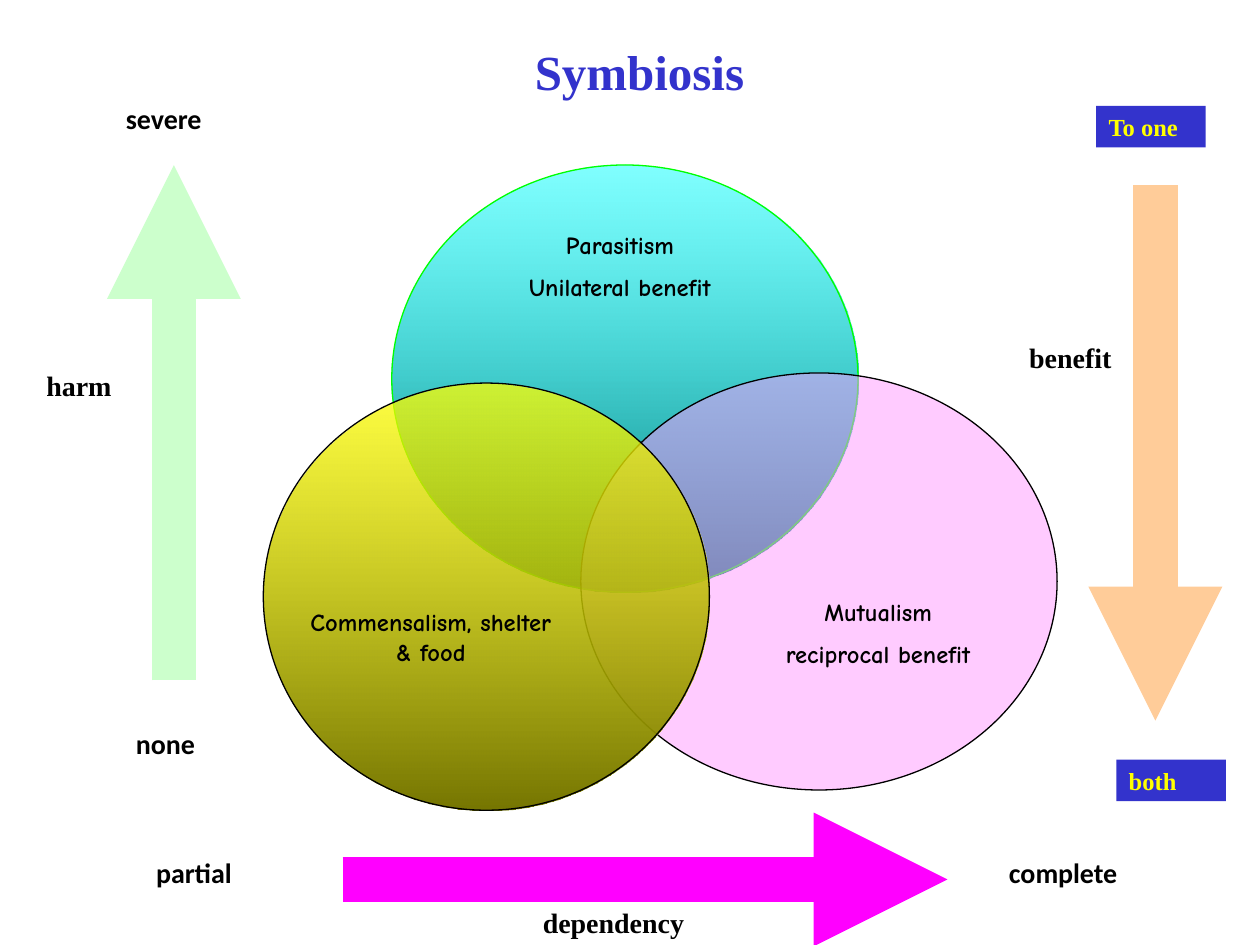
import pptx
import pptx.util
import pptx.dml.color
import pptx.enum.dml
import pptx.enum.shapes
import pptx.enum.text
import pptx.oxml.ns
from lxml import etree

Inches = pptx.util.Inches
Pt = pptx.util.Pt
RGB = pptx.dml.color.RGBColor
qn = pptx.oxml.ns.qn
SHAPE = pptx.enum.shapes.MSO_SHAPE
ALIGN = pptx.enum.text.PP_ALIGN

BLACK = RGB(0, 0, 0)
BLUE = RGB(0x33, 0x33, 0xCC)
YELLOW = RGB(0xFF, 0xFF, 0)
OLIVE = RGB(0x76, 0x76, 0)
CYAN = RGB(0, 0xFF, 0xFF)
TEAL = RGB(0, 0x76, 0x76)
GREEN = RGB(0, 0xFF, 0)
PINK = RGB(0xFF, 0x99, 0xFF)
PEACH = RGB(0xFF, 0xCC, 0x99)
MINT = RGB(0xCC, 0xFF, 0xCC)
MAGENTA = RGB(0xFF, 0, 0xFF)

SERIF = "Times New Roman"
SANS = "Calibri"
COMIC = "Comic Neue"


def add_circle(s, box, colors, opacity, line):
    sp = s.shapes.add_shape(SHAPE.OVAL, *map(Inches, box))
    sp.shadow.inherit = False
    if len(colors) == 1:
        sp.fill.solid()
        sp.fill.fore_color.rgb = colors[0]
    else:
        sp.fill.gradient()
        sp.fill.gradient_angle = 270
        for stop, color, position in zip(sp.fill.gradient_stops, colors, (0, 1)):
            stop.color.rgb = color
            stop.position = position
    first = next(sp._element.spPr.iter(qn("a:srgbClr")))
    etree.SubElement(first, qn("a:alpha"), val=str(opacity * 1000))
    sp.line.color.rgb = line
    sp.line.width = Pt(0.75)


def add_arrow(s, points, color):
    cx = s.shapes.add_connector(
        pptx.enum.shapes.MSO_CONNECTOR.STRAIGHT, *map(Inches, points))
    cx.line.color.rgb = color
    cx.line.width = Pt(25.5)
    etree.SubElement(cx.line._get_or_add_ln(), qn("a:tailEnd"), type="triangle")
    etree.SubElement(cx._element.spPr, qn("a:effectLst"))


def write_text(sp, lines, font, size, color, align=ALIGN.LEFT, wrap=True):
    tf = sp.text_frame
    tf.word_wrap = wrap
    tf.auto_size = pptx.enum.text.MSO_AUTO_SIZE.SHAPE_TO_FIT_TEXT
    tf.vertical_anchor = pptx.enum.text.MSO_ANCHOR.TOP
    tf.text = "\n".join(lines)
    for i, p in enumerate(tf.paragraphs):
        p.alignment = align
        p.font.name = font
        p.font.size = Pt(size)
        p.font.bold = True
        p.font.color.rgb = color
        if i:
            p.space_before = Pt(size / 2)


def add_label(s, box, lines, font, size, color=BLACK, **layout):
    sp = s.shapes.add_textbox(*map(Inches, box))
    write_text(sp, lines, font, size, color, **layout)


def add_tag(s, left, top, text):
    sp = s.shapes.add_shape(
        SHAPE.RECTANGLE, Inches(left), Inches(top), Inches(0.87), Inches(0.33))
    sp.shadow.inherit = False
    sp.fill.solid()
    sp.fill.fore_color.rgb = BLUE
    sp.line.fill.background()
    write_text(sp, [text], SERIF, 14, YELLOW)


def main():
    prs = pptx.Presentation()
    prs.slide_width, prs.slide_height = Inches(10), Inches(7.5)
    s = prs.slides.add_slide(prs.slide_layouts[6])

    add_circle(s, (3.11, 1.31, 3.7, 3.39), (CYAN, TEAL), 50, GREEN)
    add_circle(s, (4.61, 2.96, 3.78, 3.31), (PINK,), 50, BLACK)
    add_circle(s, (2.09, 3.04, 3.54, 3.39), (YELLOW, OLIVE), 74, BLACK)

    add_arrow(s, (9.17, 1.47, 9.17, 5.72), PEACH)
    add_arrow(s, (1.38, 5.4, 1.38, 1.31), MINT)
    add_arrow(s, (2.72, 6.98, 7.52, 6.98), MAGENTA)

    for box, lines, wrap in (
        ((3.97, 1.78, 1.9, 0.69), ["Parasitism", "Unilateral benefit"], False),
        ((5.71, 4.69, 2.52, 0.69), ["Mutualism", "reciprocal benefit"], True),
        ((2.32, 4.77, 2.2, 0.57), ["Commensalism, shelter & food"], True),
    ):
        add_label(s, box, lines, COMIC, 14, align=ALIGN.CENTER, wrap=wrap)

    add_tag(s, 8.7, 0.84, "To one")
    add_tag(s, 8.86, 6.03, "both")

    for left, top, width, text, font in (
        (0.98, 5.72, 0.79, "none", SANS),
        (0.9, 0.76, 0.95, "severe", SANS),
        (1.14, 6.74, 1.18, "partial", SANS),
        (7.91, 6.74, 1.26, "complete", SANS),
        (8.07, 2.65, 0.87, "benefit", SERIF),
        (0.27, 2.88, 0.87, "harm", SERIF),
        (4.21, 7.14, 2.2, "dependency", SERIF),
    ):
        add_label(s, (left, top, width, 0.37), [text], font, 16)

    add_label(s, (2.87, 0.28, 4.41, 0.57), ["Symbiosis"], SERIF, 28, BLUE,
              align=ALIGN.CENTER)
    prs.save("out.pptx")


if __name__ == "__main__":
    main()
